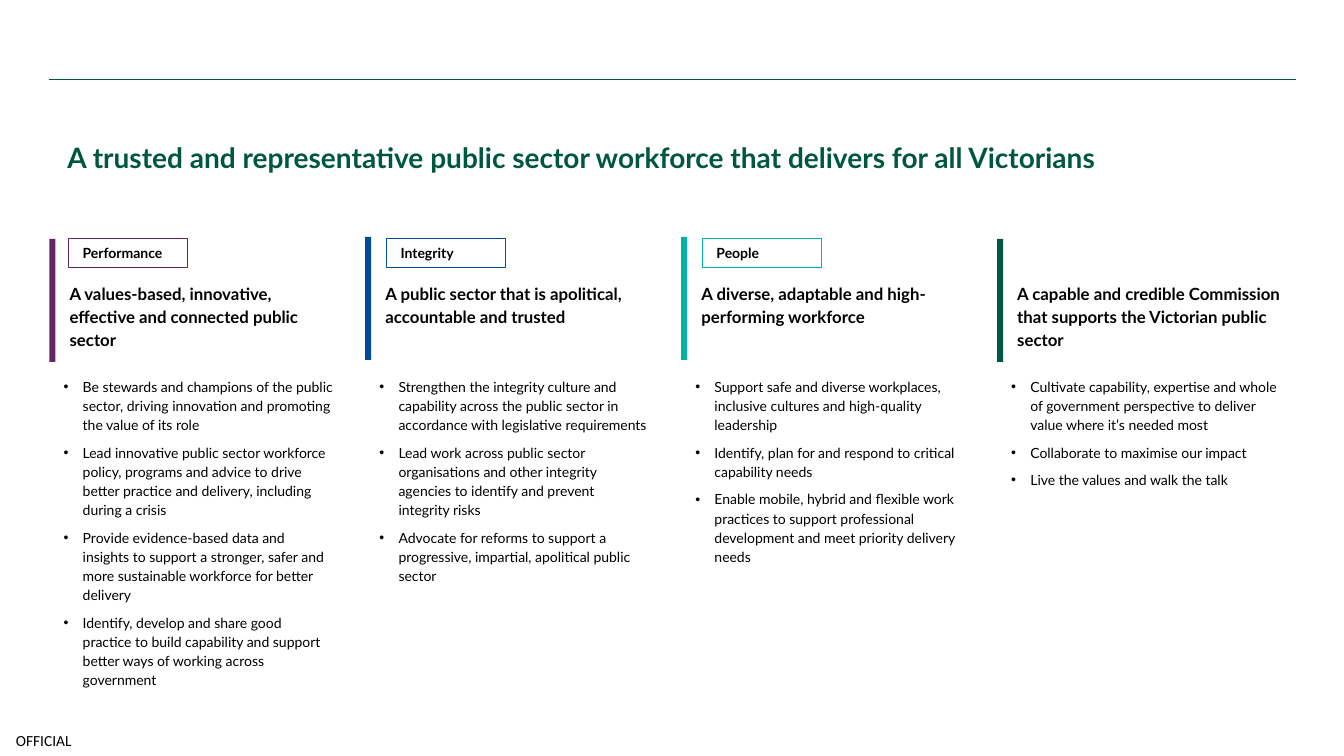
from dataclasses import dataclass

from lxml import etree
from pptx import Presentation
from pptx.dml.color import RGBColor
from pptx.enum import shapes, text
from pptx.oxml.ns import qn
from pptx.util import Inches, Pt

# Grid: four columns at an equal pitch, and the rows shared by all of them
MARGIN, PITCH, COLUMN_WIDTH = 0.49, 3.133, 2.95
LABEL_ROW, HEADING_ROW, ACTIONS_ROW = 2.37, 2.69, 3.63
BAR_WIDTH, BAR_HEIGHT = 0.06, 1.22
LINE_SPACING, INDENT = 1.14, 0.19
GREEN, BLACK, WHITE = "00573F", "000000", "FFFFFF"


@dataclass
class Pillar:
    label: str
    color: str
    heading: str
    actions: list[str]
    bar_top: float = LABEL_ROW
    label_offset: float = 0.21
    actions_height: float = 3.35


PILLARS = [
    Pillar("Performance", "642667",
           "A values-based, innovative, effective and connected public sector",
           ["Be stewards and champions of the public sector, driving innovation "
            "and promoting the value of its role",
            "Lead innovative public sector workforce policy, programs and advice "
            "to drive better practice and delivery, including during a crisis",
            "Provide evidence-based data and insights to support a stronger, safer "
            "and more sustainable workforce for better delivery",
            "Identify, develop and share good practice to build capability and "
            "support better ways of working across government"],
           label_offset=0.19),
    Pillar("Integrity", "004C97",
           "A public sector that is apolitical, accountable and trusted",
           ["Strengthen the integrity culture and capability across the public "
            "sector in accordance with legislative requirements",
            "Lead work across public sector organisations and other integrity "
            "agencies to identify and prevent integrity risks",
            "Advocate for reforms to support a progressive, impartial, apolitical "
            "public sector"],
           bar_top=2.35),
    Pillar("People", "00B2A9",
           "A diverse, adaptable and high-performing workforce",
           ["Support safe and diverse workplaces, inclusive cultures and "
            "high-quality leadership",
            "Identify, plan for and respond to critical capability needs",
            "Enable mobile, hybrid and flexible work practices to support "
            "professional development and meet priority delivery needs"],
           bar_top=2.35),
    Pillar("", GREEN,
           "A capable and credible Commission that supports the Victorian public sector",
           ["Cultivate capability, expertise and whole of government perspective "
            "to deliver value where it’s needed most",
            "Collaborate to maximise our impact",
            "Live the values and walk the talk"],
           actions_height=2.17),
]


def rgb(color: str) -> RGBColor:
    return RGBColor.from_string(color)


def set_frame(frame, inset_x: float, inset_y: float, middle: bool = False) -> None:
    frame.word_wrap = True
    frame.margin_left = frame.margin_right = Inches(inset_x)
    frame.margin_top = frame.margin_bottom = Inches(inset_y)
    frame.vertical_anchor = text.MSO_ANCHOR.MIDDLE if middle else text.MSO_ANCHOR.TOP


def set_font(paragraph, size: float, bold: bool = False,
             color: str = BLACK, name: str = "Lato") -> None:
    for run in paragraph.runs:
        run.font.name, run.font.size, run.font.bold = name, Pt(size), bold
        run.font.color.rgb = rgb(color)


def add_text(slide, box: tuple, lines: list[str], inset: tuple, size: float,
             bold: bool = False, color: str = BLACK, spacing: float = LINE_SPACING,
             middle: bool = False, bullets: bool = False):
    frame = slide.shapes.add_textbox(*map(Inches, box)).text_frame
    set_frame(frame, *inset, middle)
    frame.text = "\n".join(lines)
    for position, paragraph in enumerate(frame.paragraphs):
        if bullets:
            add_bullet(paragraph)
        paragraph.line_spacing = spacing
        paragraph.space_before = Pt(3 if position else 0)
        paragraph.space_after = Pt(3)
        set_font(paragraph, size, bold, color)
    return frame


def add_bullet(paragraph) -> None:
    properties = paragraph._p.get_or_add_pPr()
    properties.set("marL", str(Inches(INDENT)))
    properties.set("indent", str(-Inches(INDENT)))
    etree.SubElement(properties, qn("a:buFont")).set("typeface", "Arial")
    etree.SubElement(properties, qn("a:buChar")).set("char", "•")


def add_rectangle(slide, box: tuple, fill: str, line: str | None = None):
    rectangle = slide.shapes.add_shape(shapes.MSO_SHAPE.RECTANGLE, *map(Inches, box))
    rectangle.shadow.inherit = False
    rectangle.fill.solid()
    rectangle.fill.fore_color.rgb = rgb(fill)
    if line:
        rectangle.line.color.rgb = rgb(line)
        rectangle.line.width = Pt(0.75)
    else:
        rectangle.line.fill.background()
    return rectangle


def add_pillar(slide, column: int, pillar: Pillar) -> None:
    left = MARGIN + column * PITCH
    add_rectangle(slide, (left, pillar.bar_top, BAR_WIDTH, BAR_HEIGHT), pillar.color)
    if pillar.label:
        label = add_rectangle(slide, (left + pillar.label_offset, LABEL_ROW, 1.18, 0.28),
                              WHITE, pillar.color).text_frame
        set_frame(label, 0.14, 0, middle=True)
        label.text = pillar.label
        label.paragraphs[0].alignment = text.PP_ALIGN.LEFT
        set_font(label.paragraphs[0], 10, bold=True)
    add_text(slide, (left + BAR_WIDTH, HEADING_ROW, COLUMN_WIDTH - BAR_WIDTH, 0.91),
             [pillar.heading], (0.14, 0.1), 12, bold=True)
    add_text(slide, (left, ACTIONS_ROW, COLUMN_WIDTH, pillar.actions_height),
             pillar.actions, (0.14, 0.1), 10, bullets=True)


def main() -> None:
    deck = Presentation()
    deck.slide_width, deck.slide_height = Inches(13.33), Inches(7.5)
    slide = deck.slides.add_slide(deck.slide_layouts[6])

    # Rule across the top
    rule = slide.shapes.add_connector(shapes.MSO_CONNECTOR.STRAIGHT,
                                      *map(Inches, (MARGIN, 0.79, 12.85, 0.79)))
    rule.line.color.rgb = rgb(GREEN)
    rule.line.width = Pt(1)
    etree.SubElement(rule._element.spPr, qn("a:effectLst"))

    # Classification in the bottom corner
    marking = slide.shapes.add_textbox(*map(Inches, (0, 7.19, 0.87, 0.31))).text_frame
    set_frame(marking, 0, 0, middle=True)
    marking.text = "OFFICIAL"
    marking.paragraphs[0].alignment = text.PP_ALIGN.CENTER
    set_font(marking.paragraphs[0], 11, name="Calibri")

    # Vision statement
    add_text(slide, (0.57, 0.89, 12.29, 1.18),
             ["A trusted and representative public sector workforce "
              "that delivers for all Victorians"],
             (0.1, 0.04), 20, bold=True, color=GREEN, spacing=1.5, middle=True)

    # Strategic pillars
    for column, pillar in enumerate(PILLARS):
        add_pillar(slide, column, pillar)

    deck.save("out.pptx")


if __name__ == "__main__":
    main()
